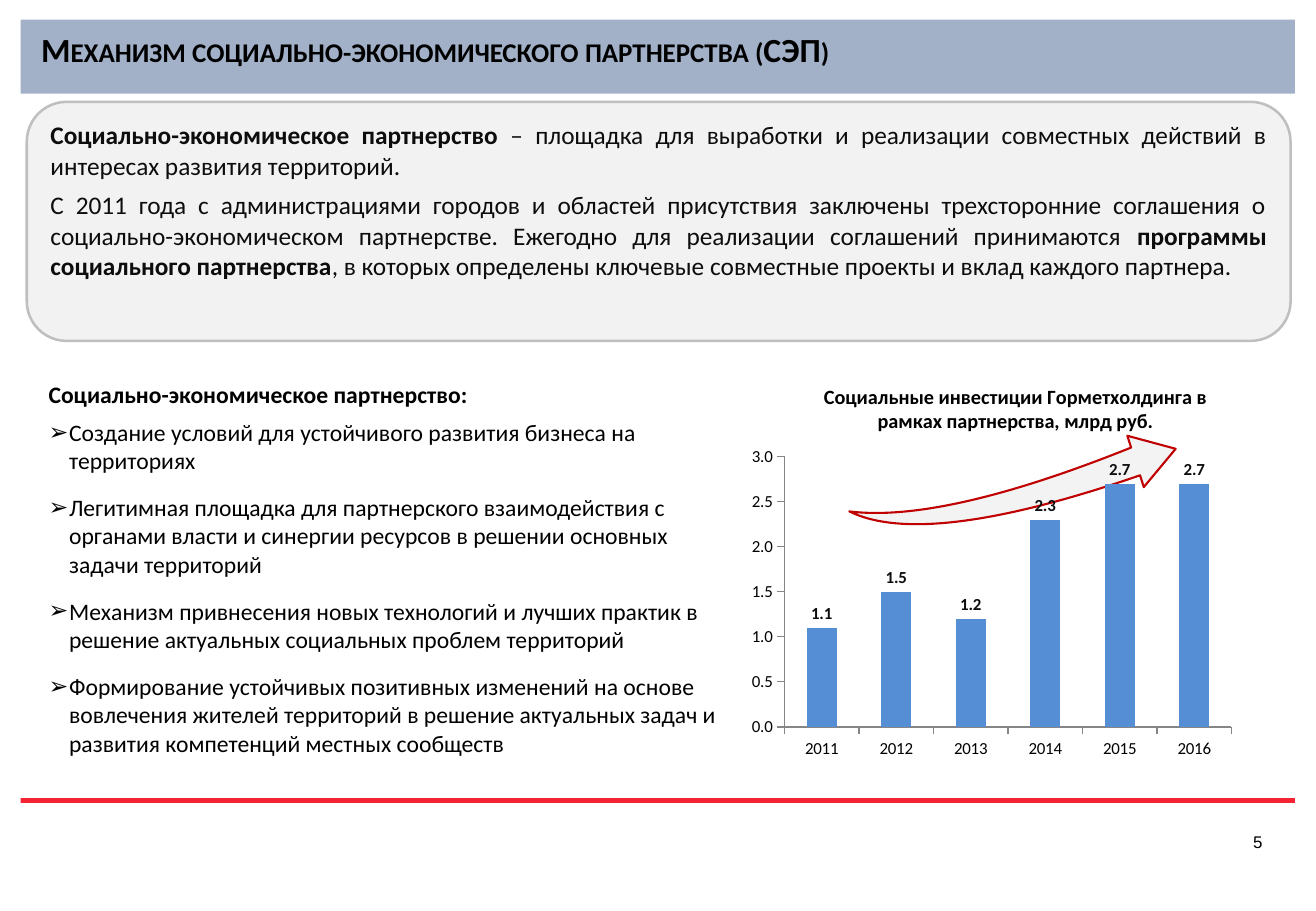
from lxml import etree
from pptx import Presentation
from pptx.chart.data import CategoryChartData
from pptx.dml.color import RGBColor
from pptx.enum import chart as charts, shapes, text
from pptx.oxml import ns
from pptx.util import Cm, Pt

BLACK = RGBColor(0x00, 0x00, 0x00)
INK = RGBColor(0x0D, 0x0D, 0x0D)
BAND_BLUE = RGBColor(0xA2, 0xB1, 0xC8)
RULE_RED = RGBColor(0xF4, 0x24, 0x34)
ARROW_RED = RGBColor(0xC0, 0x00, 0x00)
PANEL_GREY = RGBColor(0xF2, 0xF2, 0xF2)
BORDER_GREY = RGBColor(0xBF, 0xBF, 0xBF)
AXIS_GREY = RGBColor(0x86, 0x86, 0x86)
BAR_BLUE = RGBColor(0x55, 0x8E, 0xD5)

TITLE = "Механизм социально-экономического партнерства (СЭП)"
DEFINITION = [
    [("Социально-экономическое партнерство ", True),
     ("– площадка для выработки и реализации совместных действий в "
      "интересах развития территорий.", False)],
    [("С 2011 года с администрациями городов и областей присутствия заключены "
      "трехсторонние соглашения о социально-экономическом партнерстве. Ежегодно "
      "для реализации соглашений принимаются ", False),
     ("программы социального партнерства", True),
     (", в которых определены ключевые совместные проекты и вклад каждого "
      "партнера.", False)],
]
LIST_HEADING = "Социально-экономическое партнерство:"
BENEFITS = [
    "Создание условий для устойчивого развития бизнеса на территориях",
    "Легитимная площадка для партнерского взаимодействия с органами власти и "
    "синергии ресурсов в решении основных задачи территорий",
    "Механизм привнесения новых технологий и лучших практик в решение "
    "актуальных социальных проблем территорий",
    "Формирование устойчивых позитивных изменений на основе вовлечения жителей "
    "территорий в решение актуальных задач и развития компетенций местных "
    "сообществ",
]
CHART_TITLE = "Социальные инвестиции Горметхолдинга в рамках партнерства, млрд руб."
INVESTMENTS = {"2011": 1.1, "2012": 1.5, "2013": 1.2,
               "2014": 2.3, "2015": 2.7, "2016": 2.7}


def apply(target, **values):
    for name, value in values.items():
        setattr(target, name, value)


def style_font(font, size, color=BLACK, bold=False, name="Calibri"):
    apply(font, size=Pt(size), bold=bold, name=name)
    font.color.rgb = color


def place(shape, left, top, width, height):
    apply(shape, left=Cm(left), top=Cm(top), width=Cm(width), height=Cm(height))


def add_span(para, wording, size, **style):
    span = para.add_run()
    span.text = wording
    style_font(span.font, size, **style)
    return span


def add_panel(page, kind, area, fill, line=None, weight=0):
    panel = page.shapes.add_shape(kind, *map(Cm, area))
    panel.shadow.inherit = False
    panel.fill.solid()
    panel.fill.fore_color.rgb = fill
    if line is None:
        panel.line.fill.background()
    else:
        panel.line.color.rgb = line
        panel.line.width = Pt(weight)
    return panel


def set_bullet(para, mark=None, indent=0):
    """Give the paragraph a hanging bullet, or none without a mark."""
    properties = para._p.get_or_add_pPr()
    properties.set("marL", str(Cm(indent)))
    properties.set("indent", str(-Cm(indent)))
    bullet = etree.SubElement(properties, ns.qn("a:buChar" if mark else "a:buNone"))
    if mark:
        bullet.set("char", mark)


def add_title(page):
    title = page.shapes.title
    place(title, 0.86, 0.61, 25.78, 1.24)
    apply(title.text_frame, margin_left=0, margin_right=0, margin_top=0,
          margin_bottom=0, vertical_anchor=text.MSO_ANCHOR.TOP,
          auto_size=text.MSO_AUTO_SIZE.NONE)
    para = title.text_frame.paragraphs[0]
    apply(para, alignment=text.PP_ALIGN.LEFT, space_after=Pt(6))
    span = add_span(para, TITLE, 20, bold=True)
    span._r.get_or_add_rPr().set("cap", "small")


def add_benefits(page):
    body = page.placeholders[1]
    place(body, 0.76, 7.82, 14.63, 8.31)
    frame = body.text_frame
    apply(frame, word_wrap=True, auto_size=text.MSO_AUTO_SIZE.NONE,
          vertical_anchor=text.MSO_ANCHOR.TOP)
    heading = frame.paragraphs[0]
    apply(heading, space_before=Pt(0), space_after=Pt(0))
    set_bullet(heading)
    add_span(heading, LIST_HEADING, 14, bold=True)
    for benefit in BENEFITS:
        para = frame.add_paragraph()
        apply(para, space_before=Pt(5.5), space_after=Pt(5.5))
        set_bullet(para, "➢", 0.43)
        add_span(para, benefit, 14)


def add_definition(page):
    panel = add_panel(page, shapes.MSO_SHAPE.ROUNDED_RECTANGLE,
                      (0.56, 2.13, 26.42, 5), PANEL_GREY, BORDER_GREY, 1.5)
    frame = panel.text_frame
    apply(frame, word_wrap=True, vertical_anchor=text.MSO_ANCHOR.TOP)
    for index, parts in enumerate(DEFINITION):
        para = frame.add_paragraph() if index else frame.paragraphs[0]
        apply(para, alignment=text.PP_ALIGN.JUSTIFY, space_after=Pt(5.5))
        for wording, bold in parts:
            add_span(para, wording, 15, color=INK, bold=bold)


def add_growth_arrow(page):
    arrow = add_panel(page, shapes.MSO_SHAPE.SWOOSH_ARROW,
                      (17.88, 9.22, 6.76, 2.06), PANEL_GREY, ARROW_RED, 1.25)
    arrow.rotation = 335.8
    arrow.adjustments[0] = 0.294
    arrow.adjustments[1] = 0.44
    properties = arrow.element.spPr
    properties.find(ns.qn("a:xfrm")).set("flipV", "1")
    color = properties.find(ns.qn("a:solidFill")).find(ns.qn("a:srgbClr"))
    etree.SubElement(color, ns.qn("a:alpha")).set("val", "90000")


def set_plot_area(chart, **fractions):
    """Fix the inner plot area as fractions of the chart."""
    plot_area = chart.plots[0]._element.getparent()
    layout = plot_area.find(ns.qn("c:layout"))
    if layout is None:
        layout = etree.Element(ns.qn("c:layout"))
        plot_area.insert(0, layout)
    manual = etree.SubElement(layout, ns.qn("c:manualLayout"))
    settings = {"layoutTarget": "inner", "xMode": "edge", "yMode": "edge", **fractions}
    for name, value in settings.items():
        etree.SubElement(manual, ns.qn("c:" + name)).set("val", str(value))


def add_investment_chart(page):
    data = CategoryChartData(number_format="0.0")
    data.categories = list(INVESTMENTS)
    data.add_series("Социальные инвестиции", list(INVESTMENTS.values()))
    chart = page.shapes.add_chart(charts.XL_CHART_TYPE.COLUMN_CLUSTERED,
                                  Cm(15.44), Cm(7.62), Cm(11.58), Cm(8.51), data).chart
    style_font(chart.font, 10)
    apply(chart, has_legend=False, has_title=True)
    add_span(chart.chart_title.text_frame.paragraphs[0], CHART_TITLE, 12, bold=True)
    chart.chart_title.include_in_layout = False
    set_plot_area(chart, x=0.083, y=0.227, w=0.807, h=0.664)

    apply(chart.value_axis, minimum_scale=0, maximum_scale=3, major_unit=0.5)
    apply(chart.value_axis.tick_labels, number_format="0.0",
          number_format_is_linked=False)
    for axis in (chart.category_axis, chart.value_axis):
        apply(axis, has_major_gridlines=False,
              major_tick_mark=charts.XL_TICK_MARK.OUTSIDE)
        axis.format.line.color.rgb = AXIS_GREY

    plot = chart.plots[0]
    apply(plot, gap_width=150, vary_by_categories=False, has_data_labels=True)
    apply(plot.data_labels, show_value=True, number_format="0.0",
          number_format_is_linked=False,
          position=charts.XL_LABEL_POSITION.OUTSIDE_END)
    style_font(plot.data_labels.font, 10, INK, bold=True)
    bars = plot.series[0].format.fill
    bars.solid()
    bars.fore_color.rgb = BAR_BLUE


def add_page_number(page):
    box = page.shapes.add_textbox(Cm(23.62), Cm(17.27), Cm(3.02), Cm(0.79))
    box.text_frame.word_wrap = True
    para = box.text_frame.paragraphs[0]
    para.alignment = text.PP_ALIGN.RIGHT
    add_span(para, "5", 10, name="Arial")


def main():
    deck = Presentation()
    apply(deck, slide_width=Cm(27.51), slide_height=Cm(19.05))
    page = deck.slides.add_slide(deck.slide_layouts[1])
    band = add_panel(page, shapes.MSO_SHAPE.RECTANGLE,
                     (0.43, 0.41, 26.64, 1.55), BAND_BLUE)
    page.shapes.title.element.addprevious(band.element)
    add_panel(page, shapes.MSO_SHAPE.RECTANGLE, (0.43, 16.69, 26.64, 0.1), RULE_RED)
    add_page_number(page)
    add_growth_arrow(page)
    add_title(page)
    add_benefits(page)
    add_definition(page)
    add_investment_chart(page)
    deck.save("out.pptx")


if __name__ == "__main__":
    main()
